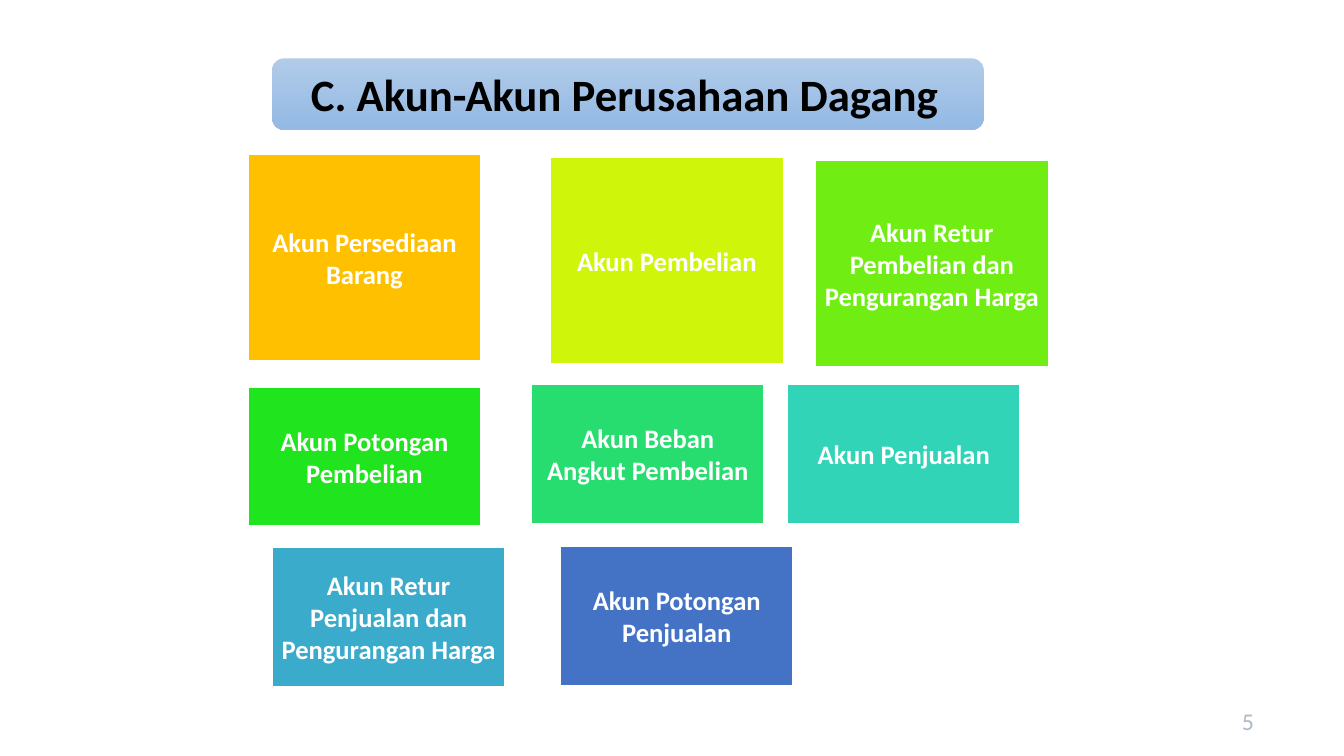
from pptx import Presentation
from pptx.dml.color import RGBColor
from pptx.enum import shapes, text
from pptx.util import Cm, Pt

WHITE = RGBColor(0xFF, 0xFF, 0xFF)
BLACK = RGBColor(0x00, 0x00, 0x00)
GREY = RGBColor(0xAD, 0xB9, 0xCA)
PALE = RGBColor(0xB1, 0xCB, 0xE9)
SKY = RGBColor(0x93, 0xB9, 0xE4)
AMBER = RGBColor(0xFF, 0xC0, 0x00)
LEMON = RGBColor(0xCF, 0xF6, 0x0A)
LIME = RGBColor(0x70, 0xEE, 0x14)
GREEN = RGBColor(0x20, 0xE5, 0x1E)
JADE = RGBColor(0x27, 0xDD, 0x70)
TEAL = RGBColor(0x31, 0xD4, 0xB6)
CYAN = RGBColor(0x3B, 0xAB, 0xCC)
BLUE = RGBColor(0x44, 0x72, 0xC4)

deck = Presentation()
deck.slide_width, deck.slide_height = Cm(33.87), Cm(19.05)
slide = deck.slides.add_slide(deck.slide_layouts[6])


def write(shape, words, size, color, align, bold=True):
    frame = shape.text_frame
    frame.text = words
    frame.word_wrap = True
    para = frame.paragraphs[0]
    para.alignment = align
    font = para.runs[0].font
    font.name, font.size, font.bold = "Calibri", Pt(size), bold
    font.color.rgb = color
    return frame


def panel(kind, left, top, width, height, inset):
    """Add a shadowless shape with equal insets and middle-anchored text."""
    shape = slide.shapes.add_shape(kind, Cm(left), Cm(top), Cm(width), Cm(height))
    shape.shadow.inherit = False
    frame = shape.text_frame
    frame.margin_left = frame.margin_right = Cm(inset)
    frame.margin_top = frame.margin_bottom = Cm(inset)
    frame.vertical_anchor = text.MSO_ANCHOR.MIDDLE
    frame.paragraphs[0].line_spacing = 0.9
    return shape


# Title banner
title = panel(shapes.MSO_SHAPE.ROUNDED_RECTANGLE, 6.86, 1.47, 17.93, 1.8, 0.33)
title.fill.gradient()
title.fill.gradient_angle = 270
for stop, color, place in zip(title.fill.gradient_stops, (PALE, SKY), (0, 1)):
    stop.color.rgb = color
    stop.position = place
title.line.fill.background()
frame = write(title, "C. Akun-Akun Perusahaan Dagang", 32, BLACK, text.PP_ALIGN.LEFT)
frame.margin_left = Cm(0.89)

# Page number
page = slide.shapes.add_textbox(Cm(30.61), Cm(17.68), Cm(1.68), Cm(0.99))
write(page, "5", 17.1, GREY, text.PP_ALIGN.CENTER, bold=False)

# Account tiles: height of each row, then left, top, colour and label
rows = [
    (5.21, [
        (6.25, 3.89, AMBER, "Akun Persediaan Barang"),
        (13.87, 3.96, LEMON, "Akun Pembelian"),
        (20.55, 4.04, LIME, "Akun Retur Pembelian dan Pengurangan Harga"),
    ]),
    (3.51, [
        (6.25, 9.75, GREEN, "Akun Potongan Pembelian"),
        (13.39, 9.68, JADE, "Akun Beban Angkut Pembelian"),
        (19.84, 9.68, TEAL, "Akun Penjualan"),
    ]),
    (3.51, [
        (6.86, 13.79, CYAN, "Akun Retur Penjualan dan Pengurangan Harga"),
        (14.12, 13.77, BLUE, "Akun Potongan Penjualan"),
    ]),
]
for height, tiles in rows:
    for left, top, color, label in tiles:
        tile = panel(shapes.MSO_SHAPE.RECTANGLE, left, top, 5.87, height, 0.2)
        tile.fill.solid()
        tile.fill.fore_color.rgb = color
        tile.line.color.rgb = WHITE
        tile.line.width = Pt(1)
        write(tile, label, 19, WHITE, text.PP_ALIGN.CENTER)

deck.save("out.pptx")
